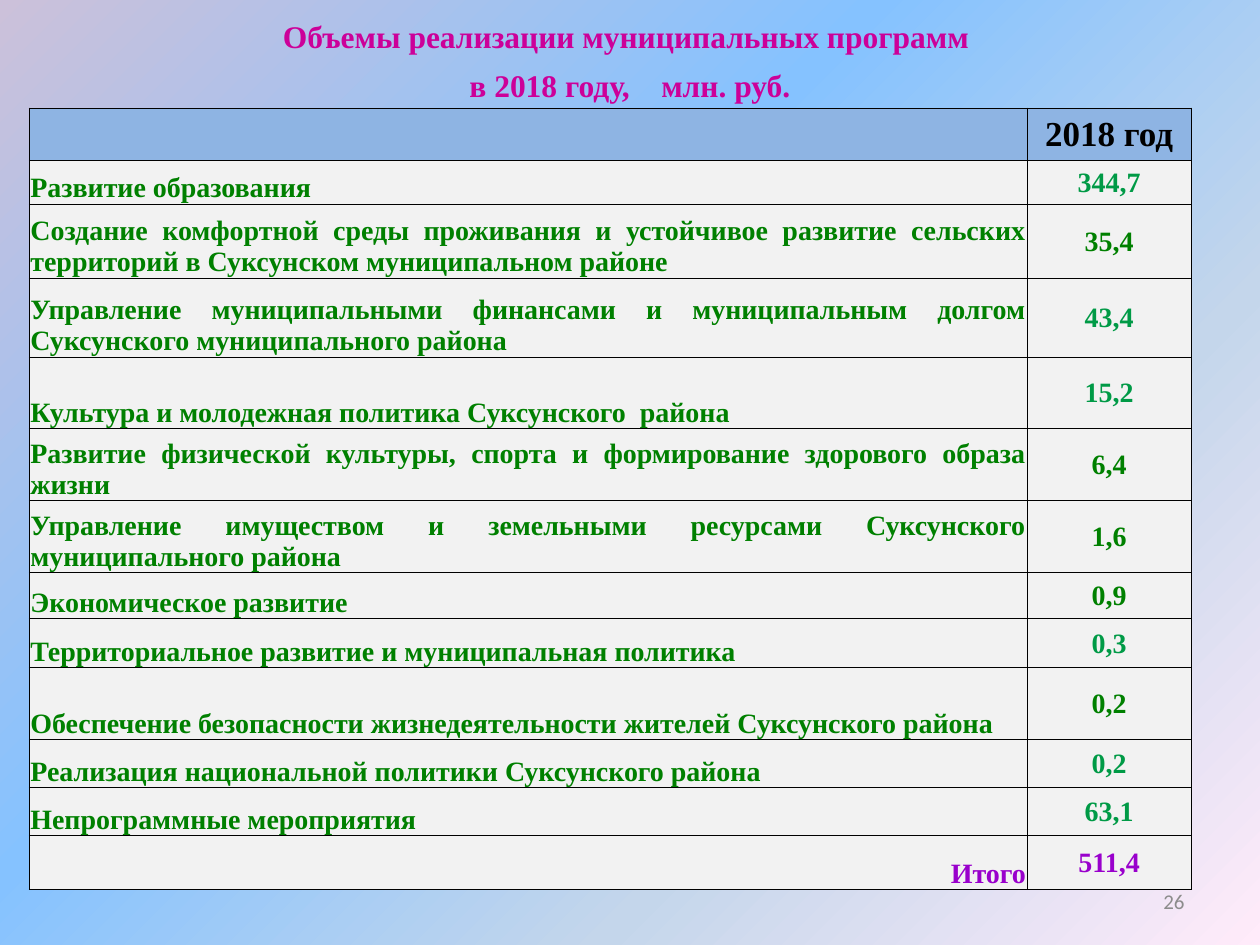
from lxml import etree
from pptx import Presentation
from pptx.dml.color import RGBColor
from pptx.enum import text
from pptx.oxml import ns
from pptx.util import Pt

MAGENTA = RGBColor(0xCC, 0x00, 0x99)
GREEN = RGBColor(0x00, 0x80, 0x00)
EMERALD = RGBColor(0x00, 0x9A, 0x46)
PURPLE = RGBColor(0x99, 0x00, 0xCC)
BLACK = RGBColor(0, 0, 0)
GRAY = RGBColor(0x8C, 0x8C, 0x8C)
HEADER_FILL = RGBColor(0x8E, 0xB4, 0xE3)
BODY_FILL = RGBColor(0xF2, 0xF2, 0xF2)
BACKGROUND_STOPS = [
    (0, RGBColor(0xCC, 0xC1, 0xDA)), (40, RGBColor(0x85, 0xC2, 0xFF)),
    (70, RGBColor(0xC4, 0xD6, 0xEB)), (100, RGBColor(0xFF, 0xEB, 0xFA)),
]
SERIF = "Times New Roman"

TITLE = "Объемы реализации муниципальных программ \vв 2018 году,    млн. руб."
PAGE_NUMBER = "26"
HEADER = ("", "2018 год", 29.7)
# program, amount, amount colour, row height
PROGRAMS = [
    ("Развитие образования", "344,7", EMERALD, 25.1),
    ("Создание комфортной среды проживания и устойчивое развитие сельских "
     "территорий в Суксунском муниципальном районе", "35,4", GREEN, 42.3),
    ("Управление муниципальными финансами и муниципальным долгом "
     "Суксунского муниципального района", "43,4", EMERALD, 45.1),
    ("Культура и молодежная политика Суксунского  района", "15,2", EMERALD, 41.1),
    ("Развитие физической культуры, спорта и формирование здорового образа жизни",
     "6,4", GREEN, 41.1),
    ("Управление имуществом и земельными ресурсами Суксунского "
     "муниципального района", "1,6", GREEN, 41.1),
    ("Экономическое развитие", "0,9", GREEN, 26.3),
    ("Территориальное развитие и муниципальная политика", "0,3", EMERALD, 28),
    ("Обеспечение безопасности жизнедеятельности жителей Суксунского района",
     "0,2", GREEN, 41.1),
    ("Реализация национальной политики Суксунского района", "0,2", EMERALD, 27.4),
    ("Непрограммные мероприятия", "63,1", EMERALD, 27.4),
]
TOTAL = ("Итого", "511,4", 30.9)

TABLE_LEFT, TABLE_TOP = 16.7, 61.8
COLUMN_WIDTHS = [570.2, 93.8]


def format_runs(paragraph, size, color, bold=True, font=SERIF):
    for run in paragraph.runs:
        run.font.name = font
        run.font.size = Pt(size)
        run.font.bold = bold
        run.font.color.rgb = color


def paint_background(slide):
    fill = slide.background.fill
    fill.gradient()
    fill.gradient_angle = 315
    stops = slide.background._cSld.find(".//" + ns.qn("a:gsLst"))
    for stop in list(stops):
        stops.remove(stop)
    for position, color in BACKGROUND_STOPS:
        stop = etree.SubElement(stops, ns.qn("a:gs"), pos=str(position * 1000))
        etree.SubElement(stop, ns.qn("a:srgbClr"), val=str(color))


def add_borders(cell):
    properties = cell._tc.get_or_add_tcPr()
    for index, side in enumerate(("lnL", "lnR", "lnT", "lnB")):
        line = etree.Element(ns.qn("a:" + side), w=str(int(Pt(0.5))))
        solid = etree.SubElement(line, ns.qn("a:solidFill"))
        etree.SubElement(solid, ns.qn("a:srgbClr"), val=str(BLACK))
        properties.insert(index, line)


def fill_cell(cell, content, color, fill, size, align, anchor):
    cell.margin_left = cell.margin_right = cell.margin_top = Pt(0.7)
    cell.margin_bottom = 0
    cell.vertical_anchor = anchor
    cell.fill.solid()
    cell.fill.fore_color.rgb = fill
    add_borders(cell)
    cell.text_frame.text = content
    paragraph = cell.text_frame.paragraphs[0]
    paragraph.alignment = align
    format_runs(paragraph, size, color)


def add_program_table(slide):
    align = text.PP_ALIGN
    rows = [(*HEADER[:2], BLACK, BLACK, HEADER_FILL, 20, align.LEFT, HEADER[2])]
    rows += [(name, amount, GREEN, color, BODY_FILL, 16, align.JUSTIFY, height)
             for name, amount, color, height in PROGRAMS]
    rows.append((*TOTAL[:2], PURPLE, PURPLE, BODY_FILL, 16, align.RIGHT, TOTAL[2]))

    table = slide.shapes.add_table(
        len(rows), 2, Pt(TABLE_LEFT), Pt(TABLE_TOP),
        Pt(sum(COLUMN_WIDTHS)), Pt(sum(row[-1] for row in rows))).table
    for column, width in zip(table.columns, COLUMN_WIDTHS):
        column.width = Pt(width)
    for index, row in enumerate(rows):
        name, amount, name_color, amount_color, fill, size, name_align, height = row
        table.rows[index].height = Pt(height)
        fill_cell(table.cell(index, 0), name, name_color, fill, size,
                  name_align, text.MSO_ANCHOR.BOTTOM)
        fill_cell(table.cell(index, 1), amount, amount_color, fill, size,
                  align.CENTER, text.MSO_ANCHOR.MIDDLE)


def add_title(slide):
    title = slide.shapes.title
    title.left, title.top, title.width, title.height = 0, 0, Pt(720), Pt(62.6)
    frame = title.text_frame
    frame.auto_size = text.MSO_AUTO_SIZE.NONE
    frame.vertical_anchor = text.MSO_ANCHOR.MIDDLE
    paragraph = frame.paragraphs[0]
    paragraph.text = TITLE
    paragraph.alignment = text.PP_ALIGN.CENTER
    paragraph.line_spacing = Pt(28)
    format_runs(paragraph, 18, MAGENTA)


def add_page_number(slide):
    box = slide.shapes.add_textbox(Pt(516), Pt(500.5), Pt(168), Pt(28.8))
    frame = box.text_frame
    frame.word_wrap = True
    frame.vertical_anchor = text.MSO_ANCHOR.MIDDLE
    frame.text = PAGE_NUMBER
    frame.paragraphs[0].alignment = text.PP_ALIGN.RIGHT
    format_runs(frame.paragraphs[0], 12, GRAY, bold=False, font="Calibri")


def main():
    presentation = Presentation()
    presentation.slide_width, presentation.slide_height = Pt(720), Pt(540)
    slide = presentation.slides.add_slide(presentation.slide_layouts[5])
    paint_background(slide)
    add_title(slide)
    add_page_number(slide)
    add_program_table(slide)
    presentation.save("out.pptx")


if __name__ == "__main__":
    main()
